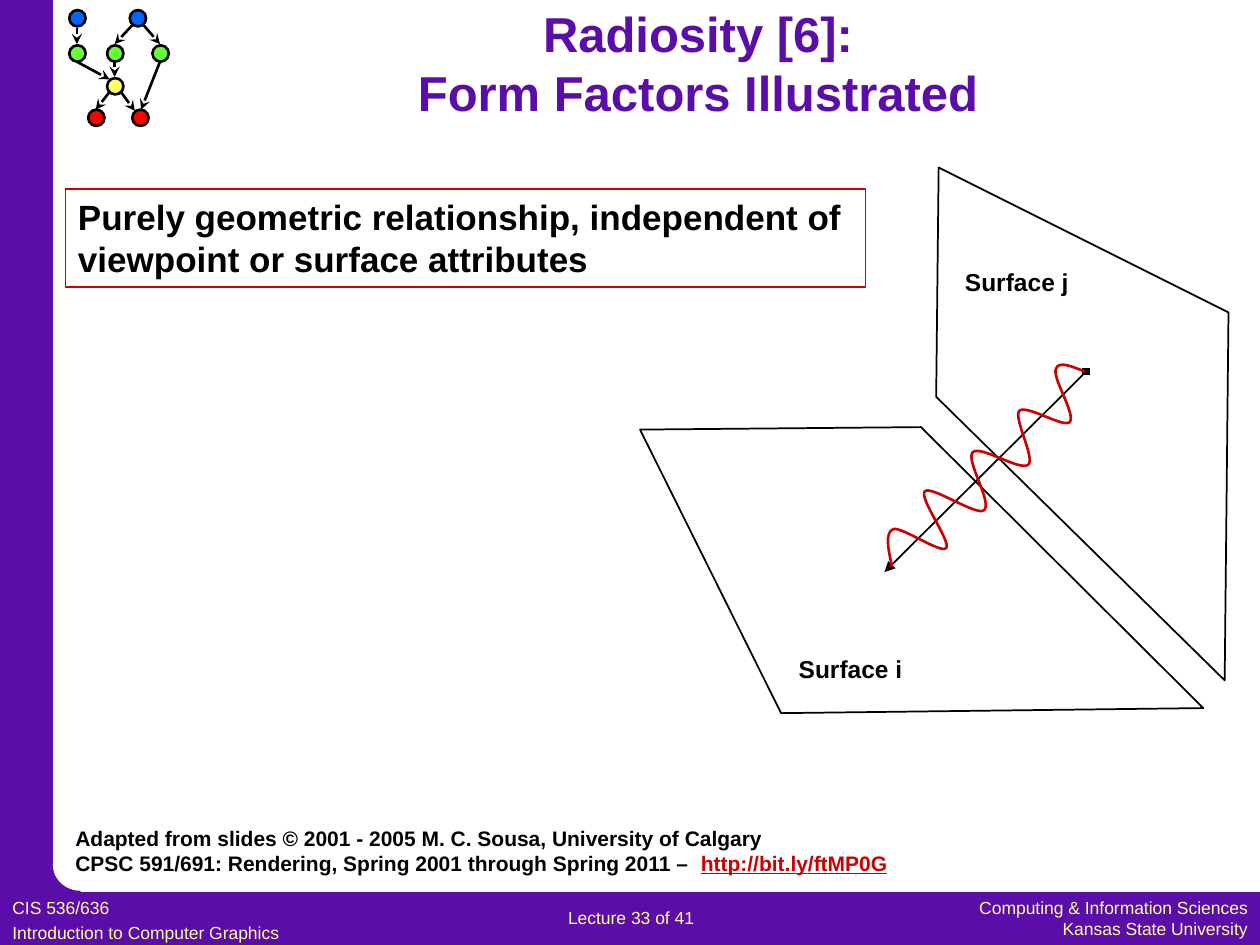
from lxml import etree
from pptx import Presentation
from pptx.dml.color import RGBColor
from pptx.enum.shapes import MSO_CONNECTOR, MSO_SHAPE
from pptx.enum.text import MSO_ANCHOR, MSO_AUTO_SIZE, PP_ALIGN
from pptx.oxml.ns import qn
from pptx.util import Inches, Pt

RECTANGLE, OVAL = MSO_SHAPE.RECTANGLE, MSO_SHAPE.OVAL
STRAIGHT = MSO_CONNECTOR.STRAIGHT
LEFT, CENTER, RIGHT = PP_ALIGN.LEFT, PP_ALIGN.CENTER, PP_ALIGN.RIGHT

THEME = {
    "font": "Arial",
    "purple": "5B0DAA", "white": "FFFFFF", "black": "000000", "red": "CC0000",
    "footer": "FFFF99", "blue_node": "0066FF", "green_node": "66FF33",
    "yellow_node": "FFFF66", "red_node": "FF0000",
    "title_size": 28, "statement_size": 20, "label_size": 14,
    "credit_size": 12, "footer_size": 10,
    "thin": 1, "thick": 1.5,
}

TITLE = ["Radiosity [6]:", "Form Factors Illustrated"]
STATEMENT = ["Purely geometric relationship, independent of viewpoint or surface attributes"]
CREDIT = [
    "Adapted from slides © 2001 - 2005 M. C. Sousa, University of Calgary",
    "CPSC 591/691: Rendering, Spring 2001 through Spring 2011 –  ",
]
CREDIT_LINK = "http://bit.ly/ftMP0G"

FRAME = [
    (RECTANGLE, (0, 7.08, 10, 0.42), "purple"),
    (RECTANGLE, (0, 0, 0.42, 7.5), "purple"),
    (RECTANGLE, (0.2, 6.85, 0.44, 0.44), "purple"),
    (OVAL, (0.42, 6.66, 0.44, 0.41), "white"),
]
FOOTERS = [
    (["CIS 536/636", "Introduction to Computer Graphics"], (0, 7.07, 2.95, 0.44), LEFT, 2),
    (["Lecture 33 of 41"], (4.41, 7.15, 1.52, 0.27), LEFT, 0),
    (["Computing & Information Sciences", "Kansas State University"],
     (7.18, 7.07, 2.82, 0.43), RIGHT, 0),
]

NODE_SIZE = 0.13
NODES = [
    (0.55, 0.08, "blue_node"), (1.03, 0.08, "blue_node"),
    (0.55, 0.36, "green_node"), (0.85, 0.36, "green_node"), (1.21, 0.36, "green_node"),
    (0.85, 0.62, "yellow_node"),
    (0.7, 0.87, "red_node"), (1.05, 0.87, "red_node"),
]
EDGES = [
    ((0.61, 0.22), (0.61, 0.35)), ((1.05, 0.2), (0.91, 0.35)),
    ((1.14, 0.2), (1.27, 0.35)), ((0.61, 0.49), (0.87, 0.63)),
    ((0.91, 0.49), (0.91, 0.61)), ((1.27, 0.49), (1.12, 0.87)),
    ((0.96, 0.73), (1.07, 0.88)), ((0.87, 0.73), (0.76, 0.87)),
]

SURFACES = [
    [(7.45, 1.33), (9.75, 2.48), (9.72, 5.4), (7.43, 3.15)],
    [(5.08, 3.41), (6.2, 5.66), (9.55, 5.62), (7.31, 3.39)],
]
SURFACE_LABELS = [("Surface i", 6.24, 5.14), ("Surface j", 7.56, 2.07)]
RAY = ((8.62, 2.95), (7.02, 4.54))
WAVE = [
    (8.61, 2.95),
    (8.51, 2.91), (8.4, 2.86), (8.38, 2.93),
    (8.35, 3), (8.54, 3.29), (8.49, 3.35),
    (8.44, 3.4), (8.15, 3.21), (8.09, 3.26),
    (8.04, 3.32), (8.22, 3.64), (8.16, 3.69),
    (8.09, 3.74), (7.78, 3.53), (7.72, 3.59),
    (7.66, 3.65), (7.88, 3.99), (7.81, 4.05),
    (7.75, 4.1), (7.39, 3.85), (7.34, 3.9),
    (7.29, 3.95), (7.55, 4.3), (7.51, 4.35),
    (7.47, 4.4), (7.16, 4.18), (7.09, 4.2),
    (7.02, 4.23), (7.05, 4.36), (7.08, 4.5),
]


def color(name):
    return RGBColor.from_string(THEME[name])


def inches(values):
    return [Inches(value) for value in values]


def style(shape, fill=None, line=None, width="thin"):
    shape.shadow.inherit = False
    if fill:
        shape.fill.solid()
        shape.fill.fore_color.rgb = color(fill)
    else:
        shape.fill.background()
    if line:
        shape.line.color.rgb = color(line)
        shape.line.width = Pt(THEME[width])
    else:
        shape.line.fill.background()


def write(shape, lines, size, ink, bold=False, align=LEFT, gap=0, anchor=MSO_ANCHOR.TOP):
    frame = shape.text_frame
    frame.word_wrap = True
    frame.auto_size = MSO_AUTO_SIZE.NONE
    frame.vertical_anchor = anchor
    for index, line in enumerate(lines):
        paragraph = frame.add_paragraph() if index else frame.paragraphs[0]
        paragraph.add_run().text = line
        paragraph.alignment = align
        paragraph.space_before = Pt(gap if index else 0)
        font = paragraph.font
        font.name, font.size, font.bold = THEME["font"], Pt(THEME[size]), bold
        font.color.rgb = color(ink)
    return frame


def add_text(slide, box, *args, **options):
    return write(slide.shapes.add_textbox(*inches(box)), *args, **options)


def add_arrow(shapes, start, end, width, tail, head=None):
    connector = shapes.add_connector(STRAIGHT, *inches(start + end))
    connector.line.color.rgb = color("black")
    connector.line.width = Pt(THEME[width])
    line = connector.line._get_or_add_ln()
    for tag, kind in (("a:headEnd", head), ("a:tailEnd", tail)):
        if kind:
            etree.SubElement(line, qn(tag), type=kind)
    etree.SubElement(connector._element.spPr, qn("a:effectLst"))


def add_outline(slide, points, closed):
    start, *rest = [inches(point) for point in points]
    builder = slide.shapes.build_freeform(*start)
    builder.add_line_segments(rest, close=closed)
    return builder.convert_to_shape()


def curve_segments(shape):
    segments = list(shape._element.iter(qn("a:lnTo")))
    for first in range(0, len(segments), 3):
        triple = segments[first:first + 3]
        curve = etree.Element(qn("a:cubicBezTo"))
        triple[0].addprevious(curve)
        for segment in triple:
            curve.append(segment[0])
            segment.getparent().remove(segment)


def add_graph(slide):
    group = slide.shapes.add_group_shape()
    for left, top, fill in NODES:
        node = group.shapes.add_shape(OVAL, *inches((left, top, NODE_SIZE, NODE_SIZE)))
        style(node, fill, "black", "thick")
    for start, end in EDGES:
        add_arrow(group.shapes, start, end, "thick", "stealth")


def add_diagram(slide):
    for corners in SURFACES:
        style(add_outline(slide, corners, True), line="black")
    add_arrow(slide.shapes, *RAY, "thin", "triangle", "diamond")
    for label, left, top in SURFACE_LABELS:
        add_text(slide, (left, top, 1.19, 0.4), [label], "label_size", "black", bold=True)
    wave = add_outline(slide, WAVE, False)
    curve_segments(wave)
    style(wave, line="red", width="thick")


def main():
    presentation = Presentation()
    presentation.slide_width, presentation.slide_height = Inches(10), Inches(7.5)
    slide = presentation.slides.add_slide(presentation.slide_layouts[5])

    for kind, box, fill in FRAME:
        style(slide.shapes.add_shape(kind, *inches(box)), fill)
    for lines, box, align, gap in FOOTERS:
        add_text(slide, box, lines, "footer_size", "footer", align=align, gap=gap)
    add_graph(slide)

    title = slide.shapes.title
    title.left, title.top, title.width, title.height = inches((1.25, 0.08, 8.58, 0.83))
    write(title, TITLE, "title_size", "purple", True, CENTER, anchor=MSO_ANCHOR.MIDDLE)

    credit = add_text(slide, (0.5, 6.5, 6.9, 0.5), CREDIT, "credit_size", "black", bold=True)
    link = credit.paragraphs[-1].add_run()
    link.text = CREDIT_LINK
    link.font.underline = True
    link.font.color.rgb = color("red")

    add_diagram(slide)
    statement = slide.shapes.add_shape(RECTANGLE, *inches((0.52, 1.5, 6.35, 0.78)))
    style(statement, line="red")
    write(statement, STATEMENT, "statement_size", "black", bold=True)

    presentation.save("out.pptx")


if __name__ == "__main__":
    main()
